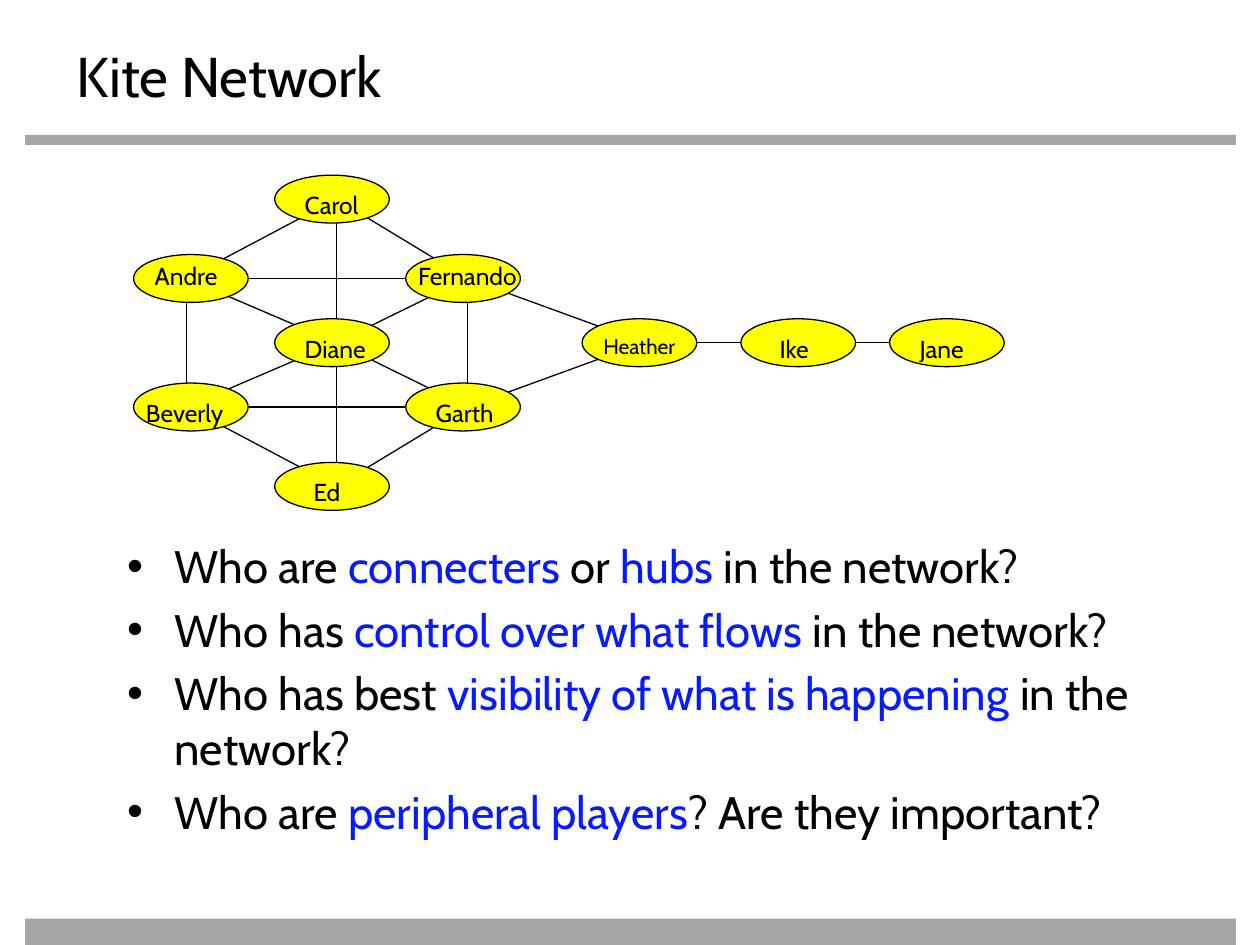
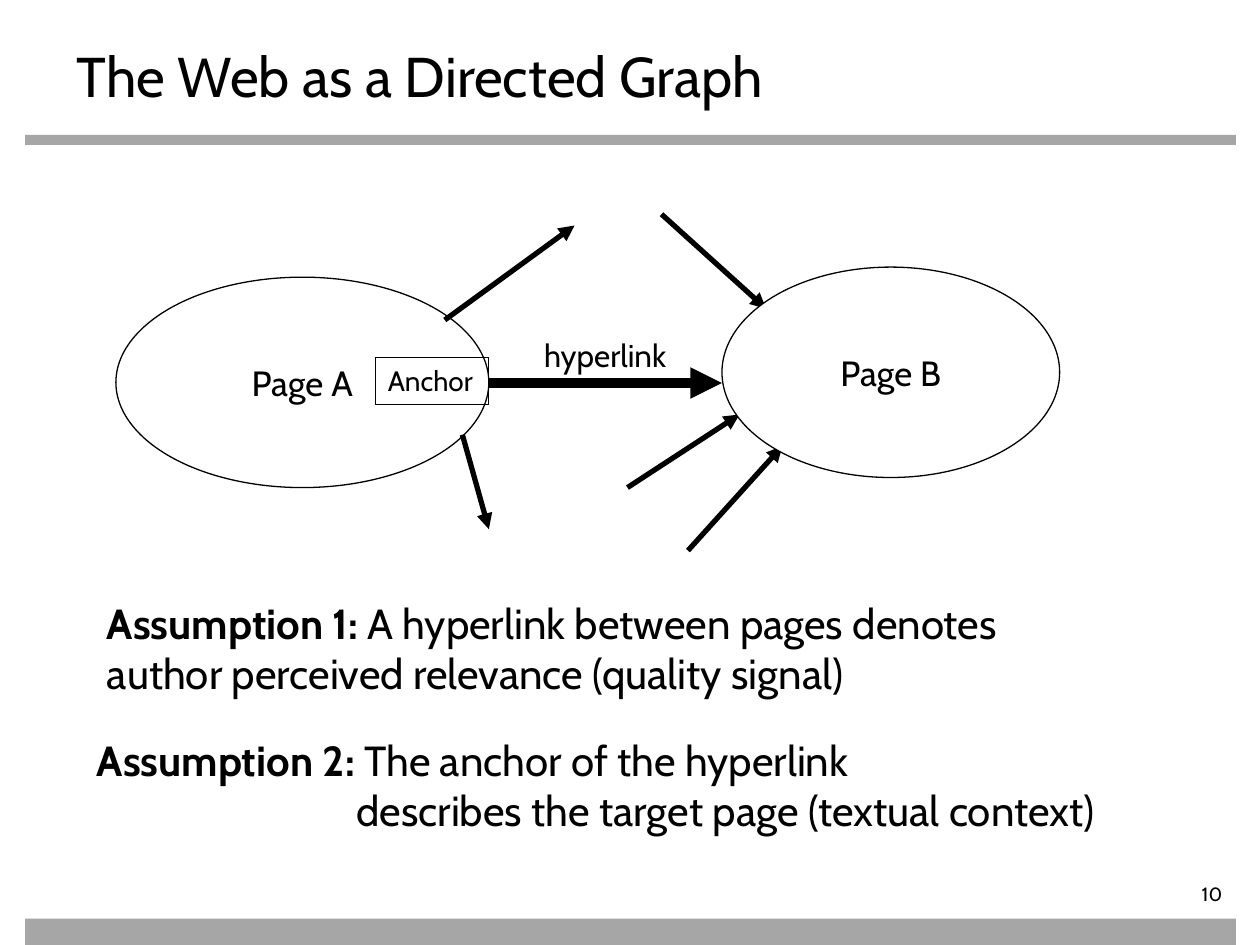
from lxml.etree import SubElement
from pptx import Presentation
from pptx.dml.color import RGBColor
from pptx.enum.shapes import MSO_CONNECTOR, MSO_SHAPE
from pptx.enum.text import MSO_ANCHOR, MSO_AUTO_SIZE, PP_ALIGN
from pptx.oxml.ns import qn
from pptx.util import Inches, Pt

SLIDE_WIDTH, SLIDE_HEIGHT = Inches(10), Inches(7.5)
GRID_COLUMNS, GRID_ROWS = 100, 75
FONT = "Cabin"
BLACK, WHITE, GRAY, YELLOW, BLUE = "000000", "FFFFFF", "A6A6A6", "FFFF00", "081BFF"
TITLE_AREA = (5.1, 2.8, 90, 5.5)
BANDS = [(2, 10.7, 96.1, 0.8), (2, 72.9, 96.1, 2.1)]

TOP_LEFT = {"vertical_anchor": MSO_ANCHOR.TOP, "auto_size": MSO_AUTO_SIZE.NONE}
WRAPPED = {**TOP_LEFT, "word_wrap": True}
UNWRAPPED = {**TOP_LEFT, "word_wrap": False}
MIDDLE = {**UNWRAPPED, "vertical_anchor": MSO_ANCHOR.MIDDLE}
BOLD = {"bold": True}

# Each network column: left edge of its ovals, and where its links meet
NETWORK_COLUMNS = {"west": (10.6, 14.8), "center": (21.8, 26.7), "east": (32.2, 37.1),
                   "bridge": (46.2, 51.1), "tail": (58.8, 63.6), "end": (70.6, 75.5)}
NETWORK_ROWS = [15.8, 22.1, 27.2, 32.3, 38.6]
OVAL_WIDTH, OVAL_HEIGHT = 9.1, 3.8
LABEL_STEP = 0.7
# name: column, row, label steps right, label steps down
PEOPLE = {
    "Carol": ("center", 0, 2, 1),
    "Fernando": ("east", 1, 0, 0),
    "Andre": ("west", 1, 1, 0),
    "Beverly": ("west", 3, 0, 1),
    "Diane": ("center", 2, 2, 1),
    "Heather": ("bridge", 2, 1, 1),
    "Ike": ("tail", 2, 3, 1),
    "Jane": ("end", 2, 2, 1),
    "Garth": ("east", 3, 2, 1),
    "Ed": ("center", 4, 3, 1),
}
FRIENDS = {
    "Carol": ["Andre", "Fernando", "Diane"],
    "Andre": ["Fernando", "Diane", "Beverly"],
    "Diane": ["Fernando", "Beverly", "Garth", "Ed"],
    "Garth": ["Fernando", "Beverly", "Ed", "Heather"],
    "Beverly": ["Ed"],
    "Heather": ["Fernando", "Ike"],
    "Ike": ["Jane"],
}

PLAIN, KEY = {}, {"color": BLUE}
QUESTIONS = [
    [("Who are ", PLAIN), ("connecters", KEY), (" or ", PLAIN), ("hubs", KEY),
     (" in the network?", PLAIN)],
    [("Who has ", PLAIN), ("control over what flows ", KEY), ("in the network?", PLAIN)],
    [("Who has best ", PLAIN), ("visibility of what is happening ", KEY),
     ("in the network?", PLAIN)],
    [("Who are ", PLAIN), ("peripheral players", KEY), ("? Are they important?", PLAIN)],
]

OTHER_LINKS = [
    ((36.7, 34.5), (38.8, 42)),
    ((35.3, 25.4), (45.6, 17.9)),
    ((49.8, 38.7), (58.7, 32.9)),
    ((54.6, 43.7), (62.1, 35.4)),
    ((52.5, 17), (60.8, 24.5)),
]
# area, hanging indent in columns, heading, lines
ASSUMPTIONS = [
    ((7.5, 46.9, 89.7, 9.1), 0, "Assumption 1:",
     (" A hyperlink between pages denotes", "author perceived relevance (quality signal)")),
    ((6.7, 57.8, 84.2, 9.1), 20.6, "Assumption 2:",
     (" The anchor of the hyperlink", "describes the target page (textual context)")),
]


def column(count):
    return round(SLIDE_WIDTH * count / GRID_COLUMNS)


def row(count):
    return round(SLIDE_HEIGHT * count / GRID_ROWS)


def place(area):
    """Turn left, top, width and height in grid units into slide lengths."""
    left, top, width, height = area
    return column(left), row(top), column(width), row(height)


def rgb(color):
    return RGBColor.from_string(color)


def set_format(target, values):
    for name, value in values.items():
        setattr(target, name, value)


def write(paragraph, runs, size):
    """Add (text, format) runs; a newline becomes a line break."""
    for text, values in runs:
        if text == "\n":
            paragraph.add_line_break()
            continue
        run = paragraph.add_run()
        run.text = text
        font_values = dict(values)
        run.font.color.rgb = rgb(font_values.pop("color", BLACK))
        set_format(run.font, {"name": FONT, "size": Pt(size), **font_values})


def add_text(slide, area, runs, size, frame=WRAPPED, alignment=PP_ALIGN.LEFT):
    text_frame = slide.shapes.add_textbox(*place(area)).text_frame
    set_format(text_frame, frame)
    paragraph = text_frame.paragraphs[0]
    paragraph.alignment = alignment
    write(paragraph, runs, size)
    return text_frame


def add_shape(slide, kind, area, fill=None, outline=BLACK):
    shape = slide.shapes.add_shape(kind, *place(area))
    shape.shadow.inherit = False
    if fill:
        shape.fill.solid()
        shape.fill.fore_color.rgb = rgb(fill)
    else:
        shape.fill.background()
    if outline:
        shape.line.color.rgb = rgb(outline)
        shape.line.width = Pt(0.75)
    else:
        shape.line.fill.background()
    return shape


def add_labelled_shape(slide, kind, area, label, size, fill=None, frame=MIDDLE,
                       alignment=PP_ALIGN.CENTER):
    text_frame = add_shape(slide, kind, area, fill).text_frame
    set_format(text_frame, frame)
    paragraph = text_frame.paragraphs[0]
    paragraph.alignment = alignment
    write(paragraph, [(label, PLAIN)], size)


def add_line(slide, start, end, width=0.75, arrow=False):
    line = slide.shapes.add_connector(MSO_CONNECTOR.STRAIGHT, column(start[0]), row(start[1]),
                                      column(end[0]), row(end[1]))
    line.line.color.rgb = rgb(BLACK)
    line.line.width = Pt(width)
    properties = line.element.spPr
    if arrow:
        SubElement(properties.find(qn("a:ln")), qn("a:tailEnd"), type="triangle")
    SubElement(properties, qn("a:effectLst"))


def fill_placeholder(placeholder, area, paragraphs, size):
    names = ("left", "top", "width", "height")
    set_format(placeholder, dict(zip(names, place(area))))
    text_frame = placeholder.text_frame
    set_format(text_frame, WRAPPED)
    for index, runs in enumerate(paragraphs):
        paragraph = text_frame.add_paragraph() if index else text_frame.paragraphs[0]
        paragraph.alignment = PP_ALIGN.LEFT
        if index == 0:
            paragraph.space_before = Pt(0)
        write(paragraph, runs, size)


def add_slide(presentation, layout_name, title):
    layout = presentation.slide_layouts.get_by_name(layout_name)
    slide = presentation.slides.add_slide(layout)
    for band in BANDS:
        add_shape(slide, MSO_SHAPE.RECTANGLE, band, GRAY, outline=None)
    fill_placeholder(slide.shapes.title, TITLE_AREA, [[(title, PLAIN)]], 32)
    return slide


def link_point(name):
    column_name, row_index = PEOPLE[name][:2]
    return NETWORK_COLUMNS[column_name][1], NETWORK_ROWS[row_index]


def add_person(slide, name):
    column_name, row_index, steps_right, steps_down = PEOPLE[name]
    left = NETWORK_COLUMNS[column_name][0]
    top = NETWORK_ROWS[row_index] - OVAL_HEIGHT / 2
    add_shape(slide, MSO_SHAPE.OVAL, (left, top, OVAL_WIDTH, OVAL_HEIGHT), YELLOW)
    label_area = (left + steps_right * LABEL_STEP, top + steps_down * LABEL_STEP, 13, 3.4)
    add_text(slide, label_area, [(name, PLAIN)], 12 if name == "Heather" else 14)


def build_kite_network(presentation):
    slide = add_slide(presentation, "Title and Content", "Kite Network")
    fill_placeholder(slide.placeholders[1], (9.1, 42.2, 85.9, 26), QUESTIONS, 26)
    for name, friends in FRIENDS.items():
        for friend in friends:
            add_line(slide, link_point(name), link_point(friend))
    for name in PEOPLE:
        add_person(slide, name)


def build_web_graph(presentation):
    slide = add_slide(presentation, "Title Only", "The Web as a Directed Graph")
    add_line(slide, (38.1, 30.4), (57.3, 30.4), 6, arrow=True)
    add_labelled_shape(slide, MSO_SHAPE.OVAL, (9.2, 22, 29.6, 16.7), "Page A", 20, WHITE)
    add_text(slide, (42.2, 26.2, 12, 4), [("hyperlink", PLAIN)], 18, UNWRAPPED)
    for start, end in OTHER_LINKS:
        add_line(slide, start, end, 3, arrow=True)
    add_labelled_shape(slide, MSO_SHAPE.OVAL, (57.3, 21.2, 26.8, 16.7), "Page B", 20, WHITE)
    add_labelled_shape(slide, MSO_SHAPE.RECTANGLE, (29.8, 28.4, 9, 3.7), "Anchor", 16,
                       frame=UNWRAPPED, alignment=PP_ALIGN.LEFT)
    for area, hang, heading, (first, second) in ASSUMPTIONS:
        runs = [(heading, BOLD), (first, PLAIN), ("\n", PLAIN), (second, PLAIN)]
        text_frame = add_text(slide, area, runs, 24)
        if hang:
            properties = text_frame.paragraphs[0]._p.get_or_add_pPr()
            properties.set("marL", str(column(hang)))
            properties.set("indent", str(-column(hang)))
    number = add_text(slide, (87, 70, 11, 2.2), [("10", PLAIN)], 11, alignment=PP_ALIGN.RIGHT)
    set_format(number, {"margin_left": 0, "margin_top": 0, "margin_bottom": 0})


def main():
    presentation = Presentation()
    set_format(presentation, {"slide_width": SLIDE_WIDTH, "slide_height": SLIDE_HEIGHT})
    build_kite_network(presentation)
    build_web_graph(presentation)
    presentation.save("out.pptx")


if __name__ == "__main__":
    main()
